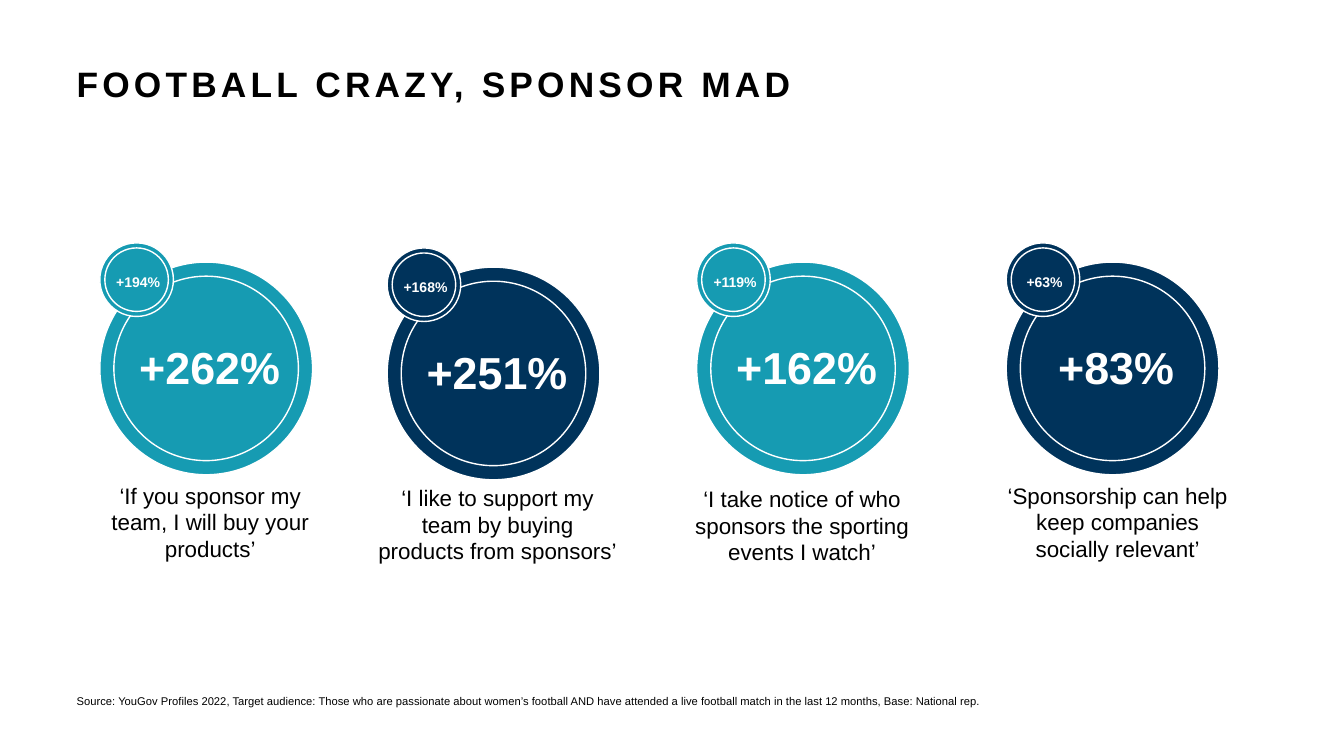
from pptx import Presentation
from pptx.dml.color import RGBColor
from pptx.enum.shapes import MSO_SHAPE as Shape
from pptx.enum.text import PP_ALIGN as Align
from pptx.util import Inches, Pt

TEAL, NAVY, WHITE, BLACK = "169BB2", "00335B", "FFFFFF", "000000"

deck = Presentation()
deck.slide_width, deck.slide_height = Inches(13.33), Inches(7.5)
slide = deck.slides.add_slide(deck.slide_layouts[6])


def write(text, left, top, width, height, size, color=BLACK, bold=False,
          align=Align.CENTER, inset=None):
    box = slide.shapes.add_textbox(*map(Inches, (left, top, width, height)))
    frame = box.text_frame
    frame.word_wrap = True
    if inset is not None:
        frame.margin_left = frame.margin_right = Inches(inset)
        frame.margin_top = frame.margin_bottom = Inches(inset)
    para = frame.paragraphs[0]
    para.text, para.alignment = text, align
    font = para.font
    font.name, font.size, font.bold = "Arial", Pt(size), bold
    font.color.rgb = RGBColor.from_string(color)
    return para


def badge(left, top, size, gap, color):
    # Filled disc with a thin white ring inside it
    for inset, fill in ((0, color), (gap, None)):
        side = Inches(size - 2 * inset)
        disc = slide.shapes.add_shape(
            Shape.OVAL, Inches(left + inset), Inches(top + inset), side, side)
        disc.shadow.inherit = False
        if fill:
            disc.fill.solid()
            disc.fill.fore_color.rgb = RGBColor.from_string(fill)
        else:
            disc.fill.background()
        disc.line.color.rgb = RGBColor.from_string(WHITE)
        disc.line.width = Pt(1)


# Title and source
title = write("FOOTBALL CRAZY, SPONSOR MAD", 0.76, 0.68, 9.94, 1.1, 25.2,
              bold=True, align=Align.LEFT, inset=0)
title.line_spacing = 0.85
title.runs[0].font._element.set("spc", "300")
source = write(
    "Source: YouGov Profiles 2022, Target audience: Those who are passionate "
    "about women’s football AND have attended a live football match in the "
    "last 12 months, Base: National rep.",
    0.76, 6.9, 10.95, 0.39, 8, align=Align.LEFT, inset=0)
source.line_spacing = 0.9

# Columns: disc left and top, colour, values, caption with its left and top
columns = [
    (0.99, 2.6, TEAL, "+262%", "+194%",
     "‘If you sponsor my team, I will buy your products’", 0.8, 4.73),
    (3.84, 2.65, NAVY, "+251%", "+168%",
     "‘I like to support my team by buying products from sponsors’", 3.65, 4.75),
    (6.91, 2.6, TEAL, "+162%", "+119%",
     "‘I take notice of who sponsors the sporting events I watch’", 6.67, 4.76),
    (9.98, 2.6, NAVY, "+83%", "+63%",
     "‘Sponsorship can help keep companies socially relevant’", 9.8, 4.73),
]
for left, top, color, main, minor, quote, x, y in columns:
    write(quote, x, y, 2.57, 0.91, 16)
    badge(left, top, 2.11, 0.14, color)
    write(main, left + 0.11, top + 0.72, 1.96, 0.64, 32, WHITE, True)
    badge(left, top - 0.19, 0.73, 0.05, color)
    write(minor, left + 0.04, top + 0.06, 0.68, 0.27, 10, WHITE, True)

deck.save("out.pptx")
